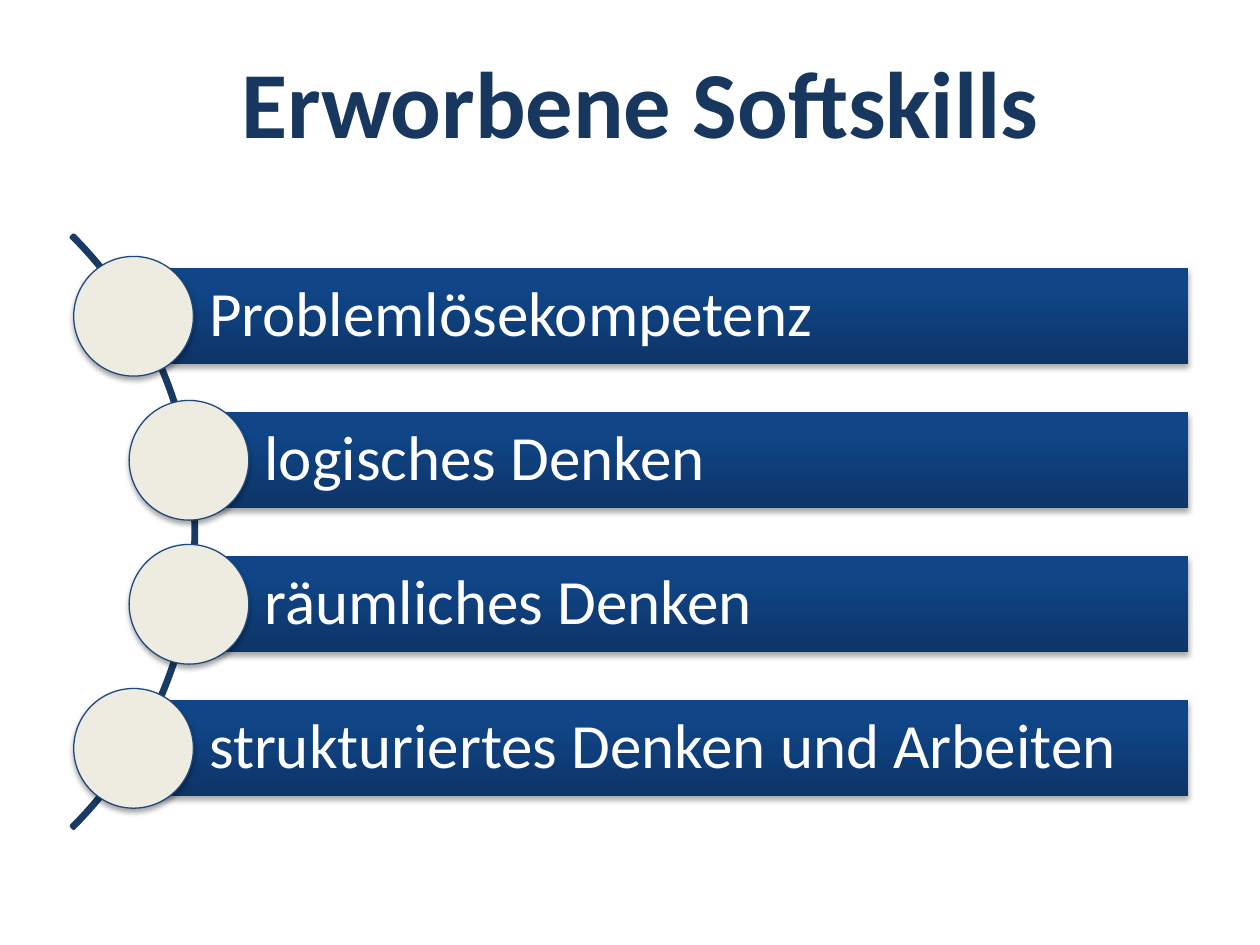
from copy import deepcopy

from lxml import etree
from pptx import Presentation
from pptx.dml.color import RGBColor
from pptx.enum.shapes import MSO_SHAPE
from pptx.enum.text import MSO_ANCHOR, MSO_AUTO_SIZE, PP_ALIGN
from pptx.oxml.ns import qn
from pptx.util import Inches, Pt

ARC, RECT, OVAL = MSO_SHAPE.BLOCK_ARC, MSO_SHAPE.RECTANGLE, MSO_SHAPE.OVAL
MIDDLE, LEFT, CENTER = MSO_ANCHOR.MIDDLE, PP_ALIGN.LEFT, PP_ALIGN.CENTER

THEME = {
    "font": "Calibri",
    "title_size": Pt(54),
    "bar_size": Pt(36),
    "title": RGBColor.from_string("17375E"),
    "bar_text": RGBColor.from_string("FFFFFF"),
    "arc": RGBColor.from_string("193A64"),
    "dot": RGBColor.from_string("EEECE1"),
    "dot_line": RGBColor.from_string("1F497D"),
    "bar_stops": [(0, "0D3568"), (0.8, "104587"), (1, "0E458A")],
}


def add_shadow(shape):
    """Soft dark shadow straight below the shape."""
    shape.shadow.inherit = False
    effects = shape._element.spPr.find(qn("a:effectLst"))
    outer = etree.SubElement(effects, qn("a:outerShdw"), blurRad=str(Pt(3.1)),
                             dist=str(Pt(1.8)), dir="5400000", rotWithShape="0")
    color = etree.SubElement(outer, qn("a:srgbClr"), val="000000")
    etree.SubElement(color, qn("a:alpha"), val="35000")


def fill_gradient(shape, stops):
    """Three-stop gradient running from bottom to top."""
    shape.fill.gradient()
    shape.fill.gradient_angle = 90
    gs_list = shape._element.spPr.find(qn("a:gradFill")).find(qn("a:gsLst"))
    gs_list.append(deepcopy(gs_list[-1]))
    for stop, (position, color) in zip(shape.fill.gradient_stops, stops):
        stop.position = position
        stop.color.rgb = RGBColor.from_string(color)


prs = Presentation()
prs.slide_width, prs.slide_height = Inches(10), Inches(7.5)
s = prs.slides.add_slide(prs.slide_layouts[5])

# Title
title = s.shapes.title
title.left, title.top = Inches(1.77), Inches(0.3)
title.width, title.height = Inches(6.62), Inches(1.01)
tf = title.text_frame
tf.text = "Erworbene Softskills"
tf.word_wrap = False
tf.auto_size = MSO_AUTO_SIZE.SHAPE_TO_FIT_TEXT
tf.vertical_anchor = MSO_ANCHOR.TOP
p = tf.paragraphs[0]
p.alignment = CENTER
p.font.name, p.font.size, p.font.bold = THEME["font"], THEME["title_size"], True
p.font.color.rgb = THEME["title"]

# Arc behind the list
arc = s.shapes.add_shape(ARC, Inches(-5.1), Inches(0.89), Inches(6.66), Inches(6.66))
for i, value in enumerate((189, 27, 0.004)):
    arc.adjustments[i] = value
arc.shadow.inherit = False
arc.fill.background()
arc.line.color.rgb = THEME["arc"]
arc.line.width = Pt(2)

# Skill bars, each with a dot centred on its left edge
FIRST_TOP, BAR_H, STEP = 2.13, 0.76, 1.143
BAR_RIGHT, DOT = 9.43, 0.95
skills = [
    ("Problemlösekompetenz", 1.06),
    ("logisches Denken", 1.5),
    ("räumliches Denken", 1.5),
    ("strukturiertes Denken und Arbeiten", 1.06),
]
for i, (skill, left) in enumerate(skills):
    top = FIRST_TOP + i * STEP
    bar = s.shapes.add_shape(RECT, Inches(left), Inches(top),
                             Inches(BAR_RIGHT - left), Inches(BAR_H))
    fill_gradient(bar, THEME["bar_stops"])
    bar.line.fill.background()
    add_shadow(bar)

    tf = bar.text_frame
    tf.text = skill
    tf.word_wrap = True
    tf.vertical_anchor = MIDDLE
    tf.margin_left = Inches(0.6)
    tf.margin_top = tf.margin_right = tf.margin_bottom = Inches(0.1)
    p = tf.paragraphs[0]
    p.alignment, p.line_spacing = LEFT, 0.9
    p.font.name, p.font.size = THEME["font"], THEME["bar_size"]
    p.font.color.rgb = THEME["bar_text"]

    dot = s.shapes.add_shape(OVAL, Inches(left - DOT / 2),
                             Inches(top + (BAR_H - DOT) / 2), Inches(DOT), Inches(DOT))
    dot.fill.solid()
    dot.fill.fore_color.rgb = THEME["dot"]
    dot.line.color.rgb = THEME["dot_line"]
    dot.line.width = Pt(0.75)
    add_shadow(dot)

prs.save("out.pptx")
